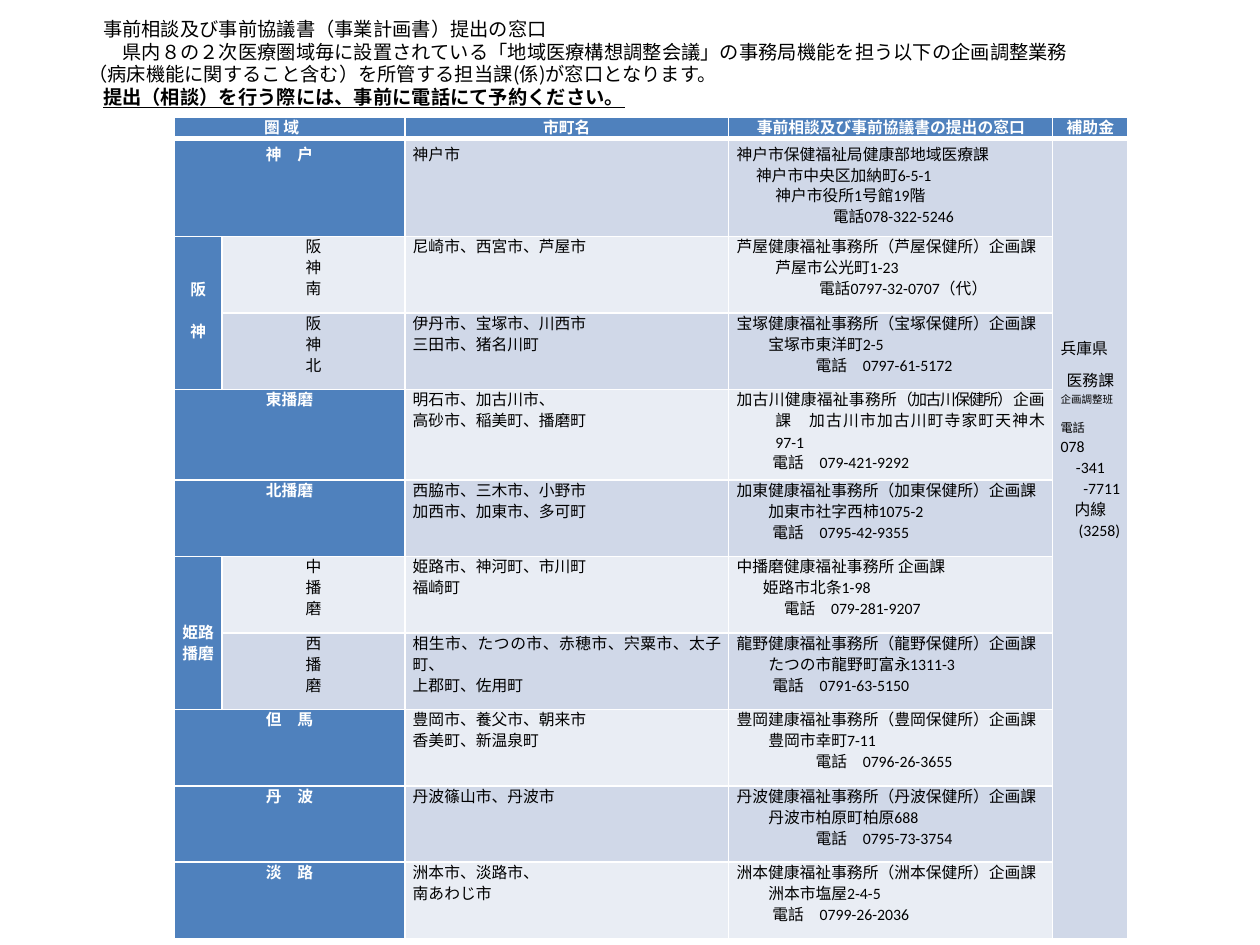
from lxml.etree import SubElement
from pptx import Presentation
from pptx.dml.color import RGBColor
from pptx.enum.text import MSO_ANCHOR, PP_ALIGN
from pptx.oxml.ns import qn
from pptx.util import Cm, Pt

WHITE = RGBColor(0xFF, 0xFF, 0xFF)
BLACK = RGBColor(0x00, 0x00, 0x00)
BLUE = RGBColor(0x4F, 0x81, 0xBD)
BANDS = [RGBColor(0xE9, 0xED, 0xF4), RGBColor(0xD0, 0xD8, 0xE8)]
JAPANESE_FONT = "Noto Sans CJK JP"


def add_text(frame, text, size=9, font="Calibri", color=BLACK, bold=False,
             underline=False, align=PP_ALIGN.JUSTIFY, line=12, before=0,
             margin=0, first=0, tracking=0, same_paragraph=False):
    paragraph = frame.paragraphs[-1]
    if paragraph.runs and not same_paragraph:
        paragraph = frame.add_paragraph()
    if not same_paragraph:
        paragraph.alignment = align
        paragraph.space_before = Pt(before)
        if line:
            paragraph.line_spacing = Pt(line)
        properties = paragraph._p.get_or_add_pPr()
        properties.set("marL", str(Cm(margin)))
        properties.set("indent", str(Cm(first)))
    run = paragraph.add_run()
    run.text = text
    run.font.size = Pt(size)
    run.font.name = font
    run.font.bold = bold
    run.font.underline = underline
    run.font.color.rgb = color
    SubElement(run.font._element, qn("a:ea"), typeface=JAPANESE_FONT)
    if tracking:
        run.font._element.set("spc", str(tracking * 100))


def format_cell(cell, fill, top, bottom):
    cell.fill.solid()
    cell.fill.fore_color.rgb = fill
    cell.margin_left = cell.margin_right = Cm(0.16)
    cell.margin_top = cell.margin_bottom = 0
    properties = cell._tc.get_or_add_tcPr()
    edges = [("a:lnL", 1), ("a:lnR", 1), ("a:lnT", top), ("a:lnB", bottom)]
    for position, (tag, width) in enumerate(edges):
        edge = SubElement(properties, qn(tag), w=str(Pt(width)))
        solid = SubElement(edge, qn("a:solidFill"))
        SubElement(solid, qn("a:srgbClr"), val=str(WHITE))
        properties.insert(position, edge)


presentation = Presentation()
presentation.slide_width = Cm(25.4)
presentation.slide_height = Cm(19.05)
slide = presentation.slides.add_slide(presentation.slide_layouts[6])

HEADERS = {0: "圏 域　", 2: "市町名", 3: "事前相談及び事前協議書の提出の窓口", 4: "補助金"}
DISTRICTS = [
    ("神　戸", "", ["神戸市"],
     [(0, "神戸市保健福祉局健康部地域医療課"), (0.39, "神戸市中央区加納町6-5-1"),
      (0.78, "神戸市役所1号館19階"), (1.94, "電話078-322-5246")]),
    ("", "阪神南", ["尼崎市、西宮市、芦屋市"],
     [(0, "芦屋健康福祉事務所（芦屋保健所）企画課"), (0.78, "芦屋市公光町1-23"),
      (1.66, "電話0797-32-0707（代）")]),
    ("", "阪神北", ["伊丹市、宝塚市、川西市", "三田市、猪名川町"],
     [(0, "宝塚健康福祉事務所（宝塚保健所）企画課"), (0.64, "宝塚市東洋町2-5"),
      (1.59, "電話　0797-61-5172")]),
    ("東播磨", "", ["明石市、加古川市、", "高砂市、稲美町、播磨町"],
     [(0, "加古川健康福祉事務所"), (0.72, "電話　079-421-9292")]),
    ("北播磨", "", ["西脇市、三木市、小野市", "加西市、加東市、多可町"],
     [(0, "加東健康福祉事務所（加東保健所）企画課"), (0.64, "加東市社字西柿1075-2"),
      (0.72, "電話　0795-42-9355")]),
    ("", "中播磨", ["姫路市、神河町、市川町", "福崎町"],
     [(0, "中播磨健康福祉事務所 企画課"), (0.53, "姫路市北条1-98"),
      (0.95, "電話　079-281-9207")]),
    ("", "西播磨", ["相生市、たつの市、赤穂市、宍粟市、太子町、", "上郡町、佐用町"],
     [(0, "龍野健康福祉事務所（龍野保健所）企画課"), (0.64, "たつの市龍野町富永1311-3"),
      (0.72, "電話　0791-63-5150")]),
    ("但　馬", "", ["豊岡市、養父市、朝来市", "香美町、新温泉町"],
     [(0, "豊岡建康福祉事務所（豊岡保健所）企画課"), (0.64, "豊岡市幸町7-11"),
      (1.59, "電話　0796-26-3655")]),
    ("丹　波", "", ["丹波篠山市、丹波市"],
     [(0, "丹波健康福祉事務所（丹波保健所）企画課"), (0.64, "丹波市柏原町柏原688"),
      (1.59, "電話　0795-73-3754")]),
    ("淡　路", "", ["洲本市、淡路市、", "南あわじ市"],
     [(0, "洲本健康福祉事務所（洲本保健所）企画課"), (0.64, "洲本市塩屋2-4-5"),
      (0.72, "電話　0799-26-2036")]),
]
COLUMN_WIDTHS = [0.97, 3.68, 6.53, 6.53, 1.52]
ROW_HEIGHTS = [0.43, 1.98, 1.54, 1.54, 1.83] + [1.54] * 6

table_shape = slide.shapes.add_table(
    len(ROW_HEIGHTS), len(COLUMN_WIDTHS), Cm(3.51), Cm(2.36),
    Cm(sum(COLUMN_WIDTHS)), Cm(sum(ROW_HEIGHTS)))
table = table_shape.table
table.first_row = False
table.horz_banding = False
for column, width in zip(table.columns, COLUMN_WIDTHS):
    column.width = Cm(width)
for row, height in zip(table.rows, ROW_HEIGHTS):
    row.height = Cm(height)

for row_index in range(len(ROW_HEIGHTS)):
    for column_index in range(len(COLUMN_WIDTHS)):
        is_region = column_index == 0 or (
            column_index == 1 and row_index > 0 and not DISTRICTS[row_index - 1][1])
        fill = BLUE if row_index == 0 or is_region else BANDS[row_index % 2]
        if row_index and column_index == 4:
            fill = BANDS[1]
        format_cell(table.cell(row_index, column_index), fill,
                    top=3 if row_index == 1 else 1,
                    bottom=3 if row_index == 0 else 1)

heading = {"color": WHITE, "bold": True, "align": PP_ALIGN.CENTER}
table.cell(0, 0).merge(table.cell(0, 1))
for column_index, text in HEADERS.items():
    add_text(table.cell(0, column_index).text_frame, text, **heading)

for row_index, (region, subregion, cities, office) in enumerate(DISTRICTS, 1):
    first_line = 15 if row_index == 1 else 12
    if region:
        table.cell(row_index, 0).merge(table.cell(row_index, 1))
        add_text(table.cell(row_index, 0).text_frame, region, line=first_line, **heading)
    for character in subregion:
        add_text(table.cell(row_index, 1).text_frame, character, align=PP_ALIGN.CENTER)
    for text in cities:
        add_text(table.cell(row_index, 2).text_frame, text, line=first_line)
    office_frame = table.cell(row_index, 3).text_frame
    for margin, text in office:
        hanging = 0.78 if region == "東播磨" and margin == 0 else 0
        add_text(office_frame, text, margin=margin + hanging, first=-hanging,
                 line=12 if margin else first_line)
        if hanging:
            add_text(office_frame, "（加古川保健所）", tracking=-1, same_paragraph=True)
            add_text(office_frame, "企画課　加古川市加古川町寺家町天神木97-1",
                     same_paragraph=True)

hanshin = table.cell(2, 0)
hanshin.merge(table.cell(3, 0))
hanshin.margin_top = Cm(0.85)
add_text(hanshin.text_frame, "阪", **heading)
add_text(hanshin.text_frame, "神", before=12, **heading)

himeji = table.cell(6, 0)
himeji.merge(table.cell(7, 0))
himeji.vertical_anchor = MSO_ANCHOR.MIDDLE
himeji.margin_top = Cm(0.42)
add_text(himeji.text_frame, "姫路播磨", **heading)

subsidy = table.cell(1, 4)
subsidy.merge(table.cell(10, 4))
subsidy.margin_top = Cm(3.82)
for text, align, size, line, before in [
    ("兵庫県", PP_ALIGN.LEFT, 9, 18, 0),
    ("医務課", PP_ALIGN.CENTER, 9, 18, 0),
    ("企画調整班", PP_ALIGN.LEFT, 6, None, 0),
    ("電話", PP_ALIGN.LEFT, 7, 12, 5),
    ("078", PP_ALIGN.LEFT, 9, 12, 0),
    ("-341", PP_ALIGN.CENTER, 9, 12, 0),
    ("-7711", PP_ALIGN.RIGHT, 9, 12, 0),
    ("内線", PP_ALIGN.CENTER, 9, 12, 0),
    ("(3258)", PP_ALIGN.RIGHT, 9, 12, 0),
]:
    add_text(subsidy.text_frame, text, align=align, size=size, line=line, before=before)

introduction = slide.shapes.add_textbox(Cm(0.28), Cm(0.23), Cm(21.67), Cm(2.9))
introduction.text_frame.word_wrap = True
for margin, text, emphasis in [
    (1.55, "事前相談及び事前協議書（事業計画書）提出の窓口", False),
    (1.94, "県内８の２次医療圏域毎に設置されている「地域医療構想調整会議」の事務局機能を担う以下の企画調整業務", False),
    (1.25, "（病床機能に関すること含む）を所管する担当課(係)が窓口となります。", False),
    (1.55, "提出（相談）を行う際には、事前に電話にて予約ください。", True),
]:
    add_text(introduction.text_frame, text, size=11, font=JAPANESE_FONT, line=13,
             margin=margin, align=PP_ALIGN.LEFT, bold=emphasis, underline=emphasis)

presentation.save("out.pptx")
